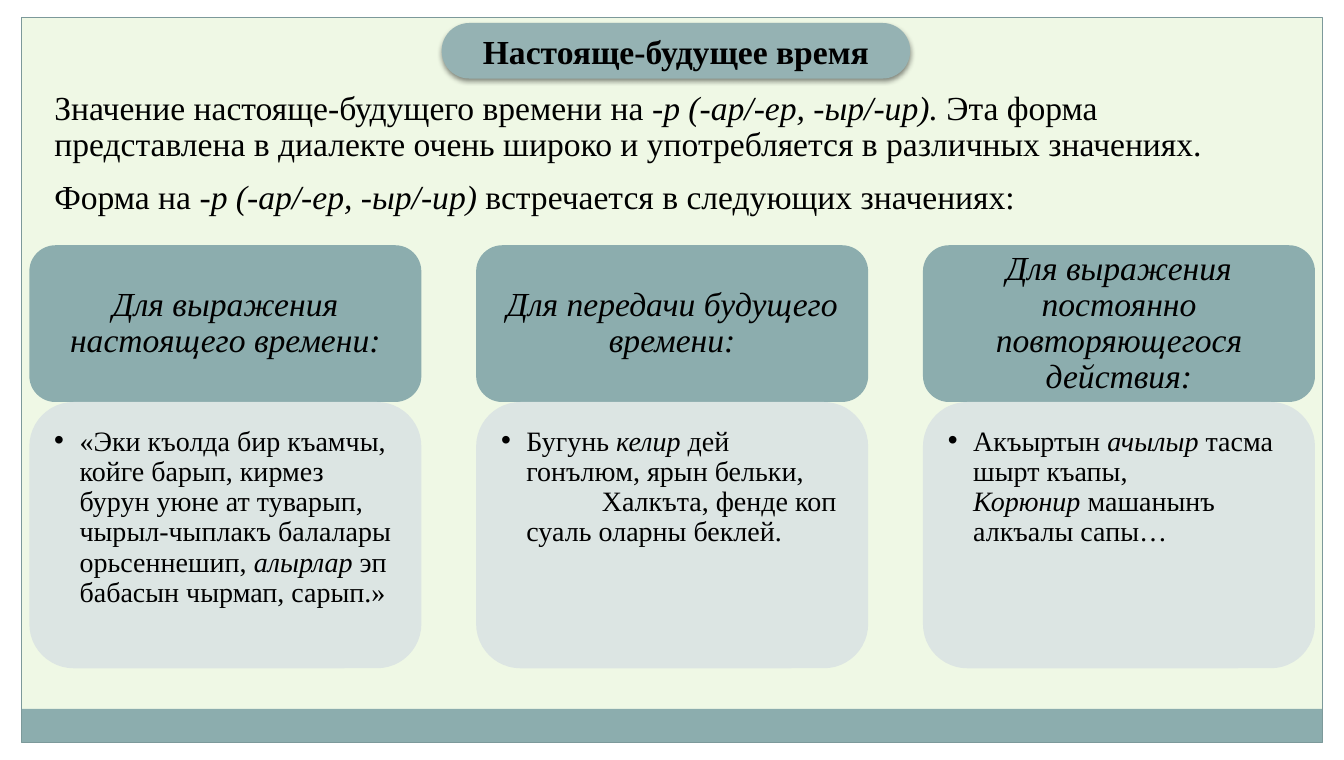
from lxml.etree import SubElement
from pptx import Presentation
from pptx.dml.color import RGBColor
from pptx.enum.shapes import MSO_SHAPE
from pptx.enum.text import MSO_ANCHOR, PP_ALIGN
from pptx.oxml.ns import qn
from pptx.util import Cm, Pt

FONT = "Times New Roman"
WIDTH, HEIGHT, MARGIN = 33.87, 19.15, 0.55
TEAL = "8CADAE"

INTRO = [
    "Значение настояще-будущего времени на *-р (-ар/-ер, -ыр/-ир). *Эта форма "
    "представлена в диалекте очень широко и употребляется в различных значениях.",
    "Форма на *-р (-ар/-ер, -ыр/-ир) *встречается в следующих значениях:",
]
MEANINGS = [
    ("Для выражения настоящего времени:",
     ["«Эки къолда бир къамчы, койге барып, кирмез бурун уюне ат туварып, "
      "чырыл-чыплакъ балалары орьсеннешип, *алырлар* эп бабасын чырмап, сарып.»"], 0),
    ("Для передачи будущего времени:",
     ["Бугунь *келир* дей гонълюм, ярын бельки,",
      "Халкъта, фенде коп суаль оларны беклей."], 1.9),
    ("Для выражения постоянно повторяющегося действия:",
     ["Акъыртын *ачылыр* тасма шырт къапы,", "*Корюнир* машанынъ алкъалы сапы…"], 0),
]


def color(value):
    """Turn a hex string into a colour."""
    return RGBColor.from_string(value)


def add_block(slide, kind, box, fill=None, line=None):
    """Draw a flat shape in a box given in centimetres."""
    block = slide.shapes.add_shape(kind, *map(Cm, box))
    block.shadow.inherit = False
    if fill:
        block.fill.solid()
        block.fill.fore_color.rgb = color(fill)
    else:
        block.fill.background()
    if line:
        block.line.color.rgb = color(line)
        block.line.width = Pt(0.75)
    else:
        block.line.fill.background()
    return block


def set_insets(frame, left, top, right, bottom):
    """Set the inner margins of a text frame in centimetres."""
    frame.margin_left, frame.margin_top = Cm(left), Cm(top)
    frame.margin_right, frame.margin_bottom = Cm(right), Cm(bottom)
    frame.word_wrap = True


def write(frame, texts, size, align=PP_ALIGN.LEFT, spacing=0.9):
    """Fill a frame with paragraphs, setting the parts between asterisks in italics."""
    for index, text in enumerate(texts):
        paragraph = frame.paragraphs[0] if index == 0 else frame.add_paragraph()
        paragraph.alignment, paragraph.line_spacing = align, spacing
        paragraph.font.name, paragraph.font.size = FONT, Pt(size)
        paragraph.font.color.rgb = color("000000")
        for part, words in enumerate(text.split("*")):
            if words:
                run = paragraph.add_run()
                run.text, run.font.italic = words, part % 2 == 1


def add_frame(slide, left, top, width, height):
    """Draw the tinted page with white margins, a bottom band and an outline."""
    slide.background.fill.solid()
    slide.background.fill.fore_color.rgb = color("EFF8E5")
    right, bottom, band = left + width, top + height, 0.86
    for strip in [(0, bottom, WIDTH, HEIGHT - bottom), (0, 0, WIDTH, top),
                  (right, 0, WIDTH - right, HEIGHT), (0, 0, left, HEIGHT)]:
        add_block(slide, MSO_SHAPE.RECTANGLE, strip, "FFFFFF")
    add_block(slide, MSO_SHAPE.RECTANGLE, (left, bottom - band, width, band), TEAL)
    add_block(slide, MSO_SHAPE.RECTANGLE, (left, top, width, height), line="7C999A")


def add_title(slide, *box):
    """Draw the title pill with its soft shadow."""
    pill = add_block(slide, MSO_SHAPE.ROUNDED_RECTANGLE, box, "95B2B3")
    pill.adjustments[0] = 0.5
    effects = pill._element.spPr.find(qn("a:effectLst"))
    shadow = SubElement(effects, qn("a:outerShdw"), blurRad=str(Pt(4)),
                        dist=str(Pt(2)), dir="5400000", rotWithShape="0")
    black = SubElement(shadow, qn("a:srgbClr"), val="000000")
    SubElement(black, qn("a:alpha"), val="45000")
    pill.text_frame.vertical_anchor = MSO_ANCHOR.MIDDLE
    write(pill.text_frame, ["Настояще-будущее время"], 24, PP_ALIGN.CENTER, 1.0)
    pill.text_frame.paragraphs[0].font.bold = True


def add_intro(slide, *box):
    """Write the two introductory paragraphs."""
    intro = slide.shapes.add_textbox(*map(Cm, box)).text_frame
    intro.word_wrap = True
    write(intro, INTRO, 24)
    for paragraph in intro.paragraphs:
        paragraph.space_before = Pt(11.9)


def add_meaning(slide, left, top, width, height, heading, example, verse_indent):
    """Draw one meaning: a heading block above a bulleted example."""
    head_height = 3.95
    head = add_block(slide, MSO_SHAPE.ROUNDED_RECTANGLE,
                     (left, top, width, head_height), TEAL)
    set_insets(head.text_frame, 0.48, 0.28, 0.48, 0.28)
    head.text_frame.vertical_anchor = MSO_ANCHOR.MIDDLE
    write(head.text_frame, [f"*{heading}*"], 24, PP_ALIGN.CENTER)

    body = add_block(slide, MSO_SHAPE.ROUNDED_RECTANGLE,
                     (left, top + head_height, width, height - head_height), "DAE3E3")
    tint = body._element.spPr.find(qn("a:solidFill")).find(qn("a:srgbClr"))
    SubElement(tint, qn("a:alpha"), val="90000")
    set_insets(body.text_frame, 0.3, 0.3, 0.4, 0.43)
    body.text_frame.vertical_anchor = MSO_ANCHOR.TOP
    write(body.text_frame, example, 20)
    hanging = 0.64
    for index, paragraph in enumerate(body.text_frame.paragraphs):
        properties = paragraph._p.get_or_add_pPr()
        properties.set("marL", str(Cm(hanging)))
        properties.set("indent", str(Cm(verse_indent if index else -hanging)))
        if index == 0:
            SubElement(properties, qn("a:buFont"), typeface="Arial")
            SubElement(properties, qn("a:buChar"), char="•")
            properties.append(properties.find(qn("a:defRPr")))


def main():
    """Build the slide and save it."""
    deck = Presentation()
    deck.slide_width, deck.slide_height = Cm(WIDTH), Cm(HEIGHT)
    slide = deck.slides.add_slide(deck.slide_layouts[6])
    add_frame(slide, MARGIN, 0.43, WIDTH - 2 * MARGIN, 18.29)
    for column, meaning in enumerate(MEANINGS):
        add_meaning(slide, 0.74 + column * 11.26, 6.18, 9.88, 10.66, *meaning)
    add_title(slide, 11.13, 0.58, 11.81, 1.4)
    add_intro(slide, 1.12, 2.18, 31.52, 2.21)
    deck.save("out.pptx")


if __name__ == "__main__":
    main()
